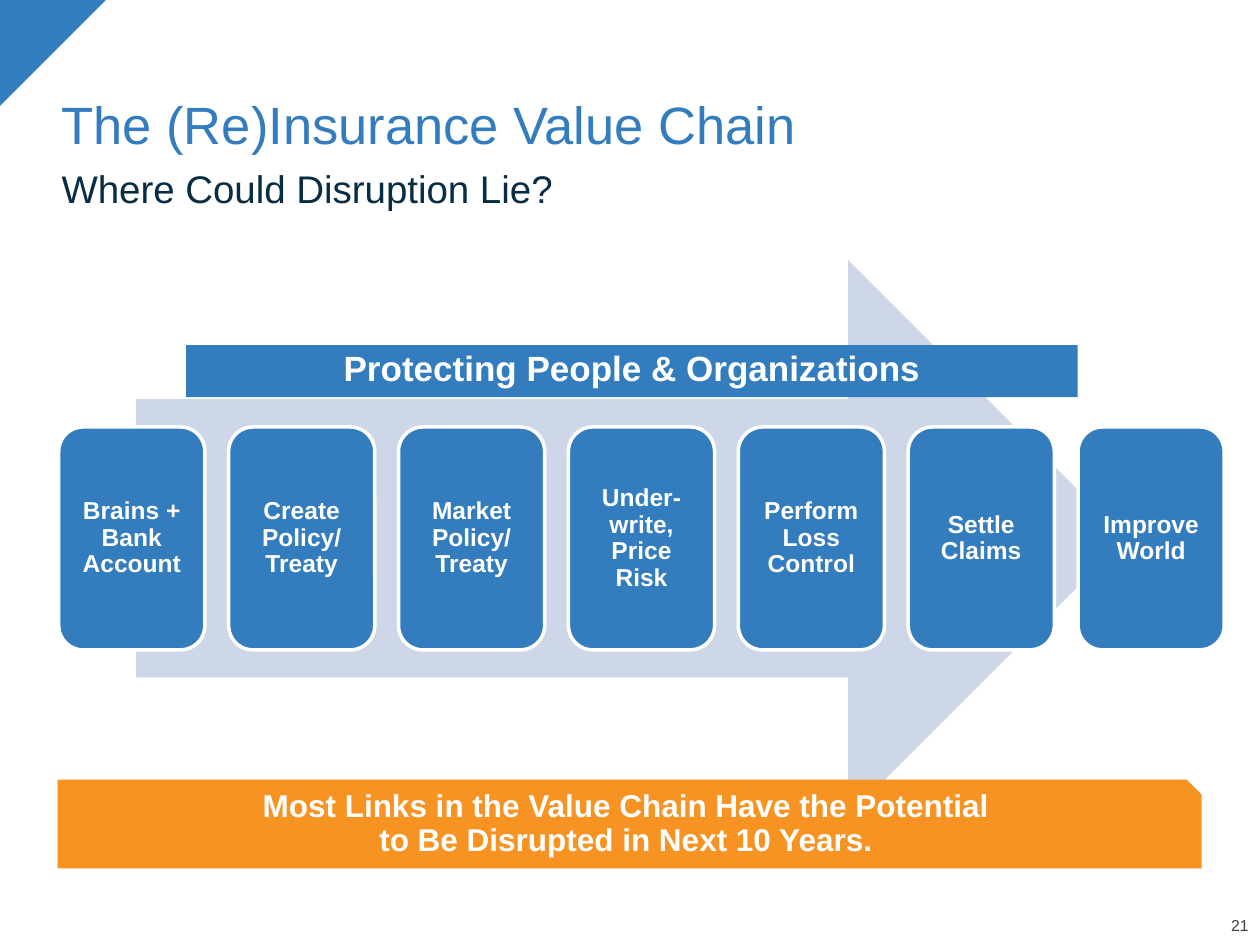
"""Build the insurance value chain slide."""
from pptx import Presentation
from pptx import util as u
from pptx.dml.color import RGBColor
from pptx.enum import shapes, text

BLUE = RGBColor(0x33, 0x7D, 0xBE)
NAVY = RGBColor(0x07, 0x2C, 0x44)
PALE = RGBColor(0xCE, 0xD7, 0xE8)
ORANGE = RGBColor(0xF6, 0x93, 0x22)
GREY = RGBColor(0x40, 0x40, 0x40)
WHITE = RGBColor(0xFF, 0xFF, 0xFF)

SHAPE = shapes.MSO_SHAPE
ALIGN = text.PP_ALIGN
ANCHOR = text.MSO_ANCHOR

STEPS = [
    "Brains + Bank Account",
    "Create Policy/ Treaty",
    "Market Policy/ Treaty",
    "Under-write, Price Risk",
    "Perform Loss Control",
    "Settle Claims",
    "Improve World",
]
CARD_LEFT, CARD_PITCH = 33.6, 97.08


class SlideBuilder:
    def __init__(self, slide, font="Arial", line_spacing=0.9):
        self.slide = slide
        self.font = font
        self.line_spacing = line_spacing

    def set_text(self, shape, content, size, color, bold=False, align=ALIGN.LEFT,
                 anchor=ANCHOR.TOP, insets=(7.2, 3.6, 7.2, 3.6)):
        frame = shape.text_frame
        frame.word_wrap = True
        frame.vertical_anchor = anchor
        (frame.margin_left, frame.margin_top,
         frame.margin_right, frame.margin_bottom) = map(u.Pt, insets)
        frame.text = content
        for paragraph in frame.paragraphs:
            paragraph.alignment = align
            paragraph.line_spacing = self.line_spacing
            for run in paragraph.runs:
                run.font.name = self.font
                run.font.size = u.Pt(size)
                run.font.bold = bold
                run.font.color.rgb = color

    def label(self, box, content, size, color, **style):
        shape = self.slide.shapes.add_textbox(*map(u.Pt, box))
        self.set_text(shape, content, size, color, **style)

    def block(self, kind, box, fill, outline=None):
        shape = self.slide.shapes.add_shape(kind, *map(u.Pt, box))
        shape.shadow.inherit = False
        shape.fill.solid()
        shape.fill.fore_color.rgb = fill
        if outline is None:
            shape.line.fill.background()
        else:
            shape.line.color.rgb = outline
            shape.line.width = u.Pt(2)
        return shape

    def banner(self, kind, box, fill, content, size, outline=None, **style):
        shape = self.block(kind, box, fill, outline)
        self.set_text(shape, content, size, WHITE, bold=True, align=ALIGN.CENTER, **style)


def main():
    presentation = Presentation()
    presentation.slide_width, presentation.slide_height = u.Pt(720), u.Pt(540)
    builder = SlideBuilder(presentation.slides.add_slide(presentation.slide_layouts[6]))

    corner = builder.block(SHAPE.RIGHT_TRIANGLE, (0, 0, 60.5, 60.5), BLUE)
    corner.rotation = 90
    builder.label((679, 524.9, 34.5, 9.4), "21", 9, GREY, align=ALIGN.RIGHT,
                  anchor=ANCHOR.BOTTOM, insets=(0, 0, 0, 0))
    builder.label((28.1, 18, 666, 74.9), "The (Re)Insurance Value Chain", 30, BLUE,
                  anchor=ANCHOR.BOTTOM)
    builder.label((28.1, 93.6, 666, 31), "Where Could Disruption Lie?", 22, NAVY)

    builder.block(SHAPE.RIGHT_ARROW, (77.8, 148.5, 565.9, 318.2), PALE)
    for index, step in enumerate(STEPS):
        box = (CARD_LEFT + index * CARD_PITCH, 244, 83.5, 127.4)
        builder.banner(SHAPE.ROUNDED_RECTANGLE, box, BLUE, step, 14, outline=WHITE,
                       anchor=ANCHOR.MIDDLE, insets=(4.3, 4.3, 4.3, 4.3))

    builder.banner(SHAPE.RECTANGLE, (106.4, 197.2, 509.5, 29.8), BLUE,
                   "Protecting People & Organizations", 20)
    builder.banner(SHAPE.SNIP_1_RECTANGLE, (33, 445.5, 653.6, 50.8), ORANGE,
                   "Most Links in the Value Chain Have the Potential\n"
                   "to Be Disrupted in Next 10 Years.", 18,
                   anchor=ANCHOR.MIDDLE, insets=(7.2, 3.6, 7.2, 7.2))

    presentation.save("out.pptx")


if __name__ == "__main__":
    main()
